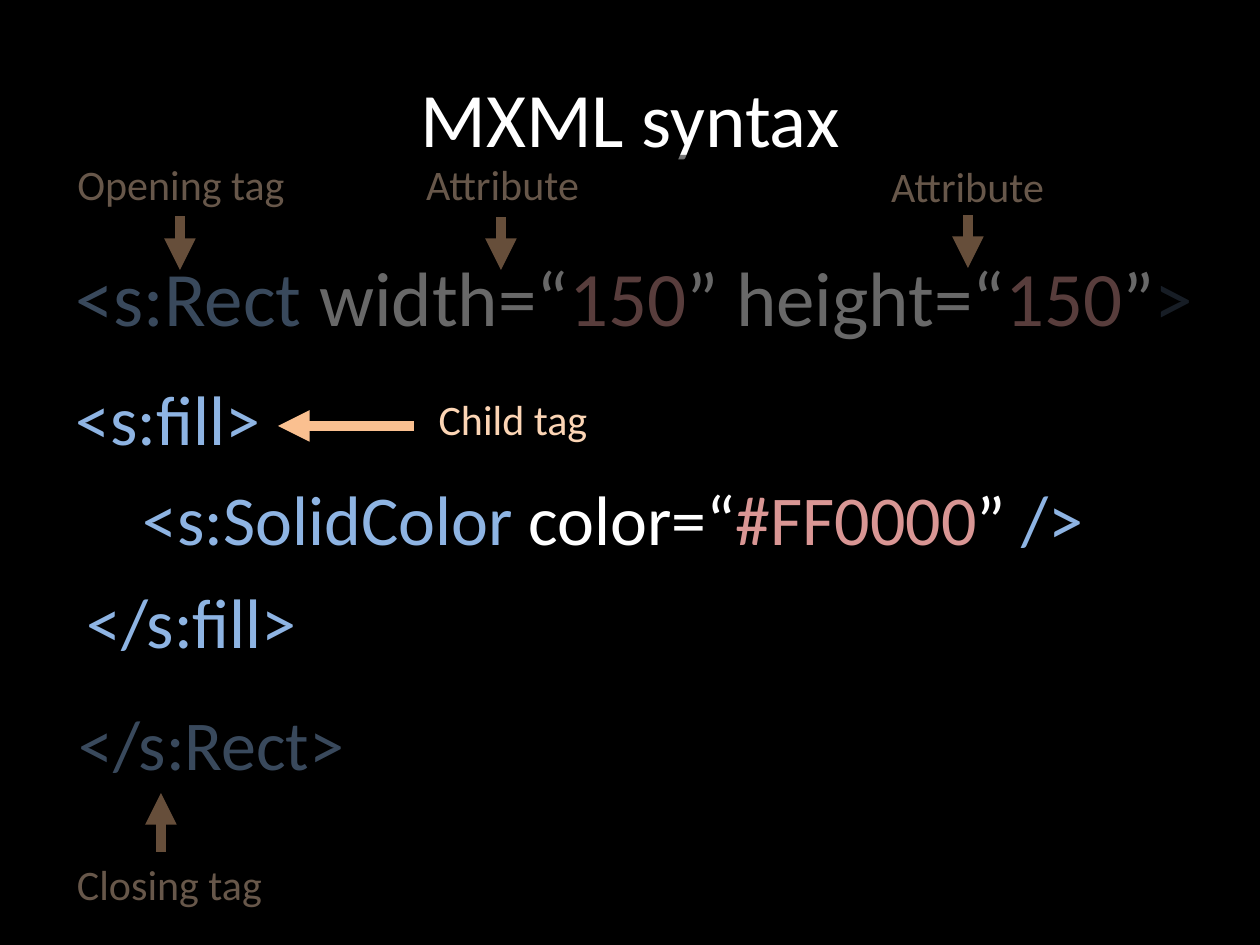
from lxml.etree import SubElement
from pptx import Presentation
from pptx.dml.color import RGBColor
from pptx.enum.shapes import MSO_CONNECTOR, MSO_SHAPE
from pptx.enum.text import MSO_ANCHOR, MSO_AUTO_SIZE, PP_ALIGN
from pptx.oxml.ns import qn
from pptx.util import Emu, Pt

EMU_PER_PX = 914400 / 126
FONT = "Calibri"
TITLE_ONLY_LAYOUT = 5
COLORS = {
    "black": "000000",
    "white": "FFFFFF",
    "tag": "8EB4E3",
    "value": "D99694",
    "label": "FCD5B5",
    "arrow": "FAC090",
}


def px(length):
    return Emu(round(length * EMU_PER_PX))


def color(name):
    return RGBColor.from_string(COLORS[name])


def format_run(run, size, color_name):
    run.font.name = FONT
    run.font.size = Pt(size)
    run.font.color.rgb = color(color_name)


def set_title(slide, text):
    title = slide.shapes.title
    title.left, title.top, title.width, title.height = map(px, (63, 38, 1134, 158))
    title.text_frame.text = text
    title.text_frame.vertical_anchor = MSO_ANCHOR.MIDDLE
    paragraph = title.text_frame.paragraphs[0]
    paragraph.alignment = PP_ALIGN.CENTER
    format_run(paragraph.runs[0], 44, "white")


def add_text(slide, box, size, parts, alignment=PP_ALIGN.LEFT):
    """Add one line of text from (text, color name) parts."""
    shape = slide.shapes.add_textbox(*map(px, box))
    text_frame = shape.text_frame
    text_frame.word_wrap = False
    text_frame.auto_size = MSO_AUTO_SIZE.SHAPE_TO_FIT_TEXT
    paragraph = text_frame.paragraphs[0]
    paragraph.alignment = alignment
    for text, color_name in parts:
        run = paragraph.add_run()
        run.text = text
        format_run(run, size, color_name)


def add_label(slide, text, left, top, width):
    add_text(slide, (left, top, width, 63), 24, [(text, "label")], PP_ALIGN.CENTER)


def add_arrow(slide, start, end):
    connector = slide.shapes.add_connector(
        MSO_CONNECTOR.STRAIGHT, *map(px, (*start, *end)))
    connector.line.width = Pt(6)
    connector.line.color.rgb = color("arrow")
    SubElement(connector.line._get_or_add_ln(), qn("a:tailEnd"), type="triangle")
    SubElement(connector._element.spPr, qn("a:effectLst"))


def add_veil(slide, *box):
    """Add a half-transparent black rectangle that dims what lies below it."""
    shape = slide.shapes.add_shape(MSO_SHAPE.RECTANGLE, *map(px, box))
    shape.fill.solid()
    shape.fill.fore_color.rgb = color("black")
    shape.line.fill.background()
    properties = shape._element.spPr
    fill_color = properties.find(qn("a:solidFill")).find(qn("a:srgbClr"))
    SubElement(fill_color, qn("a:alpha"), val="50000")

    effects = SubElement(properties, qn("a:effectLst"))
    shadow = SubElement(effects, qn("a:outerShdw"), blurRad=str(Pt(3.1)),
                        dist=str(Pt(1.8)), dir="5400000", rotWithShape="0")
    shadow_color = SubElement(shadow, qn("a:srgbClr"), val=COLORS["black"])
    SubElement(shadow_color, qn("a:alpha"), val="35000")


def add_rect_element(slide):
    """Add the outer Rect tags with their labels, dimmed by veils."""
    add_text(slide, (63, 243, 1155, 106), 44, [
        ("<s:Rect ", "tag"), ("width=“", "white"), ("150", "value"),
        ("” height=“", "white"), ("150", "value"), ("”", "white"), (">", "tag")])
    add_text(slide, (63, 694, 297, 97), 40, [("</s:Rect>", "tag")], PP_ALIGN.CENTER)

    add_label(slide, "Opening tag", 63, 152, 236)
    add_label(slide, "Attribute", 412, 152, 181)
    add_label(slide, "Closing tag", 63, 852, 213)
    for x, top in ((180, 216), (501, 217)):
        add_arrow(slide, (x, top), (x, 270))
    add_arrow(slide, (161, 852), (161, 793))

    add_veil(slide, 25, 694, 350, 291)
    add_veil(slide, 1159, 243, 73, 291)
    add_label(slide, "Attribute", 877, 154, 181)
    add_arrow(slide, (968, 215), (968, 268))
    add_veil(slide, 62, 155, 1135, 253)


def add_fill_element(slide):
    """Add the highlighted child tag with its label."""
    add_text(slide, (63, 369, 212, 97), 40, [("<s:fill>", "tag")])
    add_text(slide, (74, 572, 239, 97), 40, [("</s:fill>", "tag")])
    add_text(slide, (130, 469, 978, 97), 40, [
        ("<s:SolidColor ", "tag"), ("color=“", "white"), ("#FF0000", "value"),
        ("”", "white"), (" />", "tag")])
    add_label(slide, "Child tag", 425, 387, 176)
    add_arrow(slide, (414, 426), (278, 426))


def main():
    presentation = Presentation()
    presentation.slide_width, presentation.slide_height = px(1260), px(945)
    slide = presentation.slides.add_slide(
        presentation.slide_layouts[TITLE_ONLY_LAYOUT])
    slide.background.fill.solid()
    slide.background.fill.fore_color.rgb = color("black")
    set_title(slide, "MXML syntax")
    add_rect_element(slide)
    add_fill_element(slide)
    presentation.save("out.pptx")


if __name__ == "__main__":
    main()
